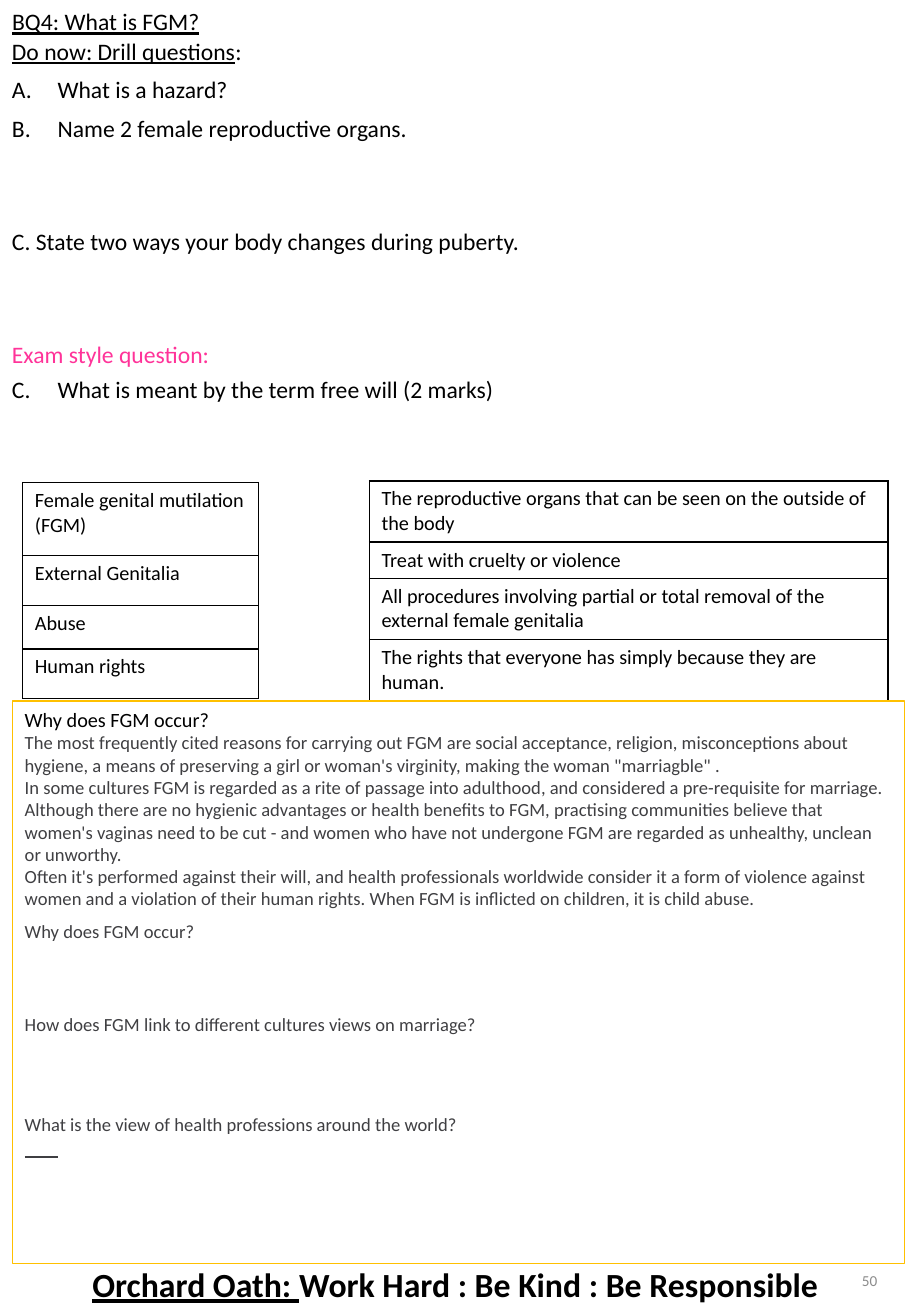
from dataclasses import dataclass

import lxml.etree
import pptx
import pptx.dml.color
import pptx.enum.shapes
import pptx.enum.text
import pptx.oxml.ns
import pptx.util

Pt = pptx.util.Pt
qn = pptx.oxml.ns.qn
ALIGN = pptx.enum.text.PP_ALIGN
ANCHOR = pptx.enum.text.MSO_ANCHOR


@dataclass(frozen=True)
class Theme:
    font: str = "Calibri"
    ink: str = "000000"
    reading: str = "3F3F42"
    exam: str = "FF3399"
    frame: str = "FFC000"
    page: str = "8C8C8C"
    oath_size: int = 20
    question_size: int = 14
    term_size: int = 12
    reading_size: int = 11
    page_size: int = 9


THEME = Theme()

TERMS = ["Female genital mutilation (FGM)", "External Genitalia", "Abuse", "Human rights"]
MEANINGS = [
    "The reproductive organs that can be seen on the outside of the body",
    "Treat with cruelty or violence",
    "All procedures involving partial or total removal of the external female genitalia",
    "The rights that everyone has simply because they are human.",
]
REASONS = [
    "The most frequently cited reasons for carrying out FGM are social acceptance, religion, "
    "misconceptions about hygiene, a means of preserving a girl or woman's virginity, "
    "making the woman \"marriagble\" .",
    "In some cultures FGM is regarded as a rite of passage into adulthood, "
    "and considered a pre-requisite for marriage.",
    "Although there are no hygienic advantages or health benefits to FGM, practising communities "
    "believe that women's vaginas need to be cut - and women who have not undergone FGM are "
    "regarded as unhealthy, unclean or unworthy.",
    "Often it's performed against their will, and health professionals worldwide consider it a form "
    "of violence against women and a violation of their human rights. "
    "When FGM is inflicted on children, it is child abuse.",
]
READING_QUESTIONS = [
    ("Why does FGM occur?", 6),
    ("How does FGM link to different cultures views on marriage?", 41.7),
    ("What is the view of health professions around the world?", 46.4),
]


def apply(target, values):
    for name, value in values.items():
        setattr(target, name, value)


def rgb(color):
    return pptx.dml.color.RGBColor.from_string(color)


def add_run(paragraph, text, size, color=THEME.ink, **style):
    run = paragraph.add_run()
    run.text = text
    apply(run.font, {"name": THEME.font, "size": Pt(size), **style})
    run.font.color.rgb = rgb(color)


def number(paragraph, start):
    properties = paragraph._p.get_or_add_pPr()
    apply_indent = {"marL": Pt(27), "indent": -Pt(27)}
    for name, value in apply_indent.items():
        properties.set(name, str(int(value)))
    bullet = lxml.etree.SubElement(properties, qn("a:buAutoNum"))
    bullet.set("type", "alphaUcPeriod")
    bullet.set("startAt", str(start))


def write(frame, paragraphs, align=ALIGN.LEFT, anchor=ANCHOR.TOP, spacing=1.0):
    apply(frame, {
        "word_wrap": True, "auto_size": pptx.enum.text.MSO_AUTO_SIZE.NONE,
        "vertical_anchor": anchor,
        "margin_left": Pt(7.2), "margin_right": Pt(7.2),
        "margin_top": Pt(3.6), "margin_bottom": Pt(3.6),
    })
    for index, (runs, before, start) in enumerate(paragraphs):
        paragraph = frame.add_paragraph() if index else frame.paragraphs[0]
        if start:
            number(paragraph, start)
        apply(paragraph, {"alignment": align, "line_spacing": spacing, "space_after": Pt(0)})
        paragraph.space_before = Pt(before)
        for text, size, style in runs:
            add_run(paragraph, text, size, **style)


def line(text, size, before=0, start=0, **style):
    return [(text, size, style)], before, start


def add_text(slide, box, paragraphs, **layout):
    text_box = slide.shapes.add_textbox(*map(Pt, box))
    write(text_box.text_frame, paragraphs, **layout)


def add_title(slide, box, text):
    title = slide.shapes.title
    apply(title, dict(zip(("left", "top", "width", "height"), map(Pt, box))))
    write(title.text_frame, [line(text, THEME.question_size, underline=True)])


def add_reading_box(slide, box, paragraphs):
    panel = slide.shapes.add_shape(pptx.enum.shapes.MSO_SHAPE.RECTANGLE, *map(Pt, box))
    panel.shadow.inherit = False
    panel.fill.background()
    panel.line.color.rgb = rgb(THEME.frame)
    panel.line.width = Pt(0.75)
    write(panel.text_frame, paragraphs)


def add_borders(cell):
    properties = cell._tc.get_or_add_tcPr()
    for side in ("a:lnL", "a:lnR", "a:lnT", "a:lnB"):
        border = lxml.etree.SubElement(properties, qn(side), w=str(int(Pt(1))))
        fill = lxml.etree.SubElement(border, qn("a:solidFill"))
        lxml.etree.SubElement(fill, qn("a:srgbClr"), val=THEME.ink)


def add_matching_table(slide, left, top, width, heights, texts):
    table = slide.shapes.add_table(
        len(texts), 1, Pt(left), Pt(top), Pt(width), Pt(sum(heights))).table
    apply(table, {"first_row": False, "horz_banding": False})
    table.columns[0].width = Pt(width)
    for row, height, text in zip(table.rows, heights, texts):
        row.height = Pt(height)
        cell = row.cells[0]
        apply(cell, {"margin_left": Pt(7.2), "margin_right": Pt(7.2),
                     "margin_top": Pt(3.4), "margin_bottom": Pt(3.4)})
        add_borders(cell)
        cell.fill.background()
        add_run(cell.text_frame.paragraphs[0], text, THEME.term_size)


def add_answer_rule(slide, left, right, y):
    rule = slide.shapes.add_connector(
        pptx.enum.shapes.MSO_CONNECTOR.STRAIGHT, Pt(left), Pt(y), Pt(right), Pt(y))
    rule.line.color.rgb = rgb(THEME.reading)
    rule.line.width = Pt(1)
    lxml.etree.SubElement(rule._element.spPr, qn("a:effectLst"))


def main():
    deck = pptx.Presentation()
    apply(deck, {"slide_width": Pt(540), "slide_height": Pt(779.76)})
    slide = deck.slides.add_slide(deck.slide_layouts[5])
    size = THEME.question_size

    oath = [("Orchard Oath: ", THEME.oath_size, {"bold": True, "underline": True}),
            ("Work Hard : Be Kind : Be Responsible", THEME.oath_size, {"bold": True})]
    add_text(slide, (0, 748, 540, 31.7), [(oath, 0, 0)], align=ALIGN.CENTER, spacing=0.9)
    add_text(slide, (405.4, 738, 121.7, 41.8), [line("50", THEME.page_size, color=THEME.page)],
             align=ALIGN.RIGHT, anchor=ANCHOR.MIDDLE)

    add_title(slide, (0, 0.7, 526, 24.5), "BQ4: What is FGM?")
    drill = [("Do now: Drill questions", size, {"underline": True}), (":", size, {})]
    add_text(slide, (0, 18.3, 528, 266), [
        (drill, 0, 0),
        line("What is a hazard?", size, 6, 1),
        line("Name 2 female reproductive organs.", size, 6, 2),
        line("C. State two ways your body changes during puberty.", size, 50),
        line("Exam style question:", size, 50.4, color=THEME.exam),
        line("What is meant by the term free will (2 marks)", size, 3.6, 3),
    ])

    add_matching_table(slide, 13.5, 286, 139.7, [43.2, 29.5, 25.9, 29.5], TERMS)
    add_matching_table(slide, 219, 285, 307.5, [36.2, 21.5, 36.2, 36.2], MEANINGS)

    reading = [line("Why does FGM occur?", THEME.term_size)]
    reading += [line(text, THEME.reading_size, color=THEME.reading) for text in REASONS]
    reading += [line(text, THEME.reading_size, gap, color=THEME.reading)
                for text, gap in READING_QUESTIONS]
    add_reading_box(slide, (7.6, 415.4, 528.5, 333.4), reading)
    add_answer_rule(slide, 14.8, 34.4, 685.6)

    deck.save("out.pptx")


if __name__ == "__main__":
    main()
